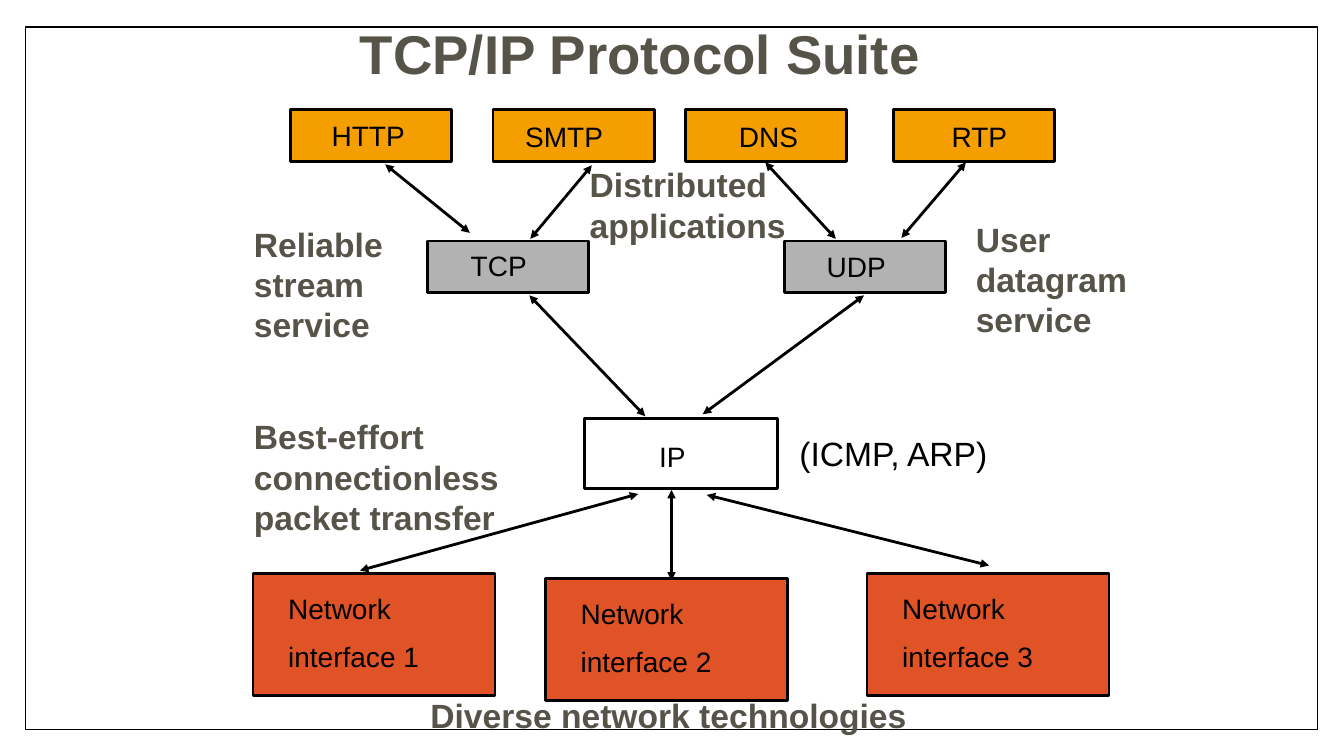
import pptx
import pptx.util
import pptx.dml.color
import pptx.enum.shapes
import pptx.enum.text
import pptx.oxml
import pptx.oxml.ns

Inches = pptx.util.Inches
Pt = pptx.util.Pt
RGBColor = pptx.dml.color.RGBColor
ANCHOR = pptx.enum.text.MSO_ANCHOR

BLACK = RGBColor(0x00, 0x00, 0x00)
WHITE = RGBColor(0xFF, 0xFF, 0xFF)
TAUPE = RGBColor(0x56, 0x53, 0x49)
ORANGE = RGBColor(0xF5, 0x9E, 0x00)
GRAY = RGBColor(0xB2, 0xB2, 0xB2)
RED = RGBColor(0xDF, 0x53, 0x27)

FRAME = (0.25, 0.27, 12.82, 6.97)
TITLE = ("TCP/IP Protocol Suite", (3.47, 0.15, 5.78, 0.75))
SIDE_PROTOCOLS = ("(ICMP, ARP)", (7.83, 4.24, 2.13, 0.5))
CAPTIONS = [
    ("Diverse network technologies", (4.17, 6.84, 5.17, 0.5)),
    ("Reliable stream service", (2.42, 2.17, 2, 1.31)),
    ("User\ndatagram service", (9.58, 2.12, 2, 1.31)),
    ("Distributed applications", (5.75, 1.58, 2.58, 0.91)),
    ("Best-effort\nconnectionless packet transfer", (2.42, 4.08, 3.18, 1.31)),
]

LAYERS = [
    dict(size=(1.6, 0.51), fill=ORANGE, label_fill=ORANGE, label_height=0.43, nodes=[
        ("HTTP", 2.88, 1.09, 0.31, 0.04, 1.03),
        ("SMTP", 4.89, 1.09, 0.22, 0.05, 0.97),
        ("DNS", 6.8, 1.09, 0.43, 0.05, 0.87),
        ("RTP", 8.86, 1.09, 0.48, 0.05, 0.76),
    ]),
    dict(size=(1.6, 0.51), fill=GRAY, label_fill=None, label_height=0.43, nodes=[
        ("TCP", 4.24, 2.39, 0.33, 0.03, 0.76),
        ("UDP", 7.78, 2.39, 0.32, 0.04, 0.79),
    ]),
    dict(size=(1.91, 0.7), fill=None, label_fill=None, label_height=0.43, nodes=[
        ("IP", 5.8, 4.15, 0.64, 0.16, 0.46),
    ]),
    dict(size=(2.4, 1.21), fill=RED, label_fill=RED, label_height=0.93, nodes=[
        ("Network\ninterface 1", 2.51, 5.69, 0.25, 0.12, 1.94),
        ("Network\ninterface 2", 5.41, 5.74, 0.25, 0.12, 1.94),
        ("Network\ninterface 3", 8.6, 5.69, 0.25, 0.12, 1.94),
    ]),
]

ARROWS = [
    (3.82, 1.63, 4.66, 2.31),
    (5.26, 2.37, 5.87, 1.64),
    (8.29, 2.37, 7.59, 1.61),
    (8.94, 2.36, 9.58, 1.61),
    (6.4, 4.13, 5.25, 2.93),
    (6.97, 4.11, 8.57, 2.93),
    (3.57, 5.66, 6.33, 4.9),
    (6.66, 5.76, 6.66, 4.86),
    (9.81, 5.61, 7.01, 4.91),
]

CAPTION_FONT = dict(name="Arial", size=Pt(24), bold=True)
TITLE_FONT = dict(name="Arial", size=Pt(39), bold=True)
SIDE_FONT = dict(name="Arial", size=Pt(24), bold=False)
LABEL_FONT = dict(name="Arial", size=Pt(20), bold=False)


def paint(shape, color):
    if color is None:
        shape.fill.background()
    else:
        shape.fill.solid()
        shape.fill.fore_color.rgb = color


def add_box(slide, bounds, fill, line_width):
    box = slide.shapes.add_shape(
        pptx.enum.shapes.MSO_SHAPE.RECTANGLE, *map(Inches, bounds))
    box.shadow.inherit = False
    paint(box, fill)
    box.line.color.rgb = BLACK
    box.line.width = Pt(line_width)


def add_words(slide, words, bounds, font, color, wrap=True,
              anchor=ANCHOR.TOP, gap=0, fill=None):
    holder = slide.shapes.add_textbox(*map(Inches, bounds))
    paint(holder, fill)
    frame = holder.text_frame
    frame.word_wrap = wrap
    frame.vertical_anchor = anchor
    for index, line in enumerate(words.split("\n")):
        paragraph = frame.add_paragraph() if index else frame.paragraphs[0]
        if index:
            paragraph.space_before = Pt(gap)
        run = paragraph.add_run()
        run.text = line
        for attribute, value in font.items():
            setattr(run.font, attribute, value)
        run.font.color.rgb = color


def add_arrow(slide, ends):
    arrow = slide.shapes.add_connector(
        pptx.enum.shapes.MSO_CONNECTOR.STRAIGHT, *map(Inches, ends))
    arrow.line.color.rgb = BLACK
    arrow.line.width = Pt(2)
    line = arrow.line._get_or_add_ln()
    for tag in ("a:headEnd", "a:tailEnd"):
        tip = pptx.oxml.parse_xml(
            f'<{tag} {pptx.oxml.ns.nsdecls("a")} type="triangle"/>')
        line.append(tip)
    arrow._element.spPr.append(pptx.oxml.parse_xml(
        f'<a:effectLst {pptx.oxml.ns.nsdecls("a")}/>'))


def main():
    deck = pptx.Presentation()
    deck.slide_width, deck.slide_height = Inches(13.33), Inches(7.5)
    slide = deck.slides.add_slide(deck.slide_layouts[6])

    add_box(slide, FRAME, WHITE, 1)
    add_words(slide, *TITLE, TITLE_FONT, TAUPE, wrap=False)
    add_words(slide, *SIDE_PROTOCOLS, SIDE_FONT, BLACK, wrap=False,
              anchor=ANCHOR.MIDDLE)
    for ends in ARROWS:
        add_arrow(slide, ends)
    for words, bounds in CAPTIONS:
        add_words(slide, words, bounds, CAPTION_FONT, TAUPE)

    for layer in LAYERS:
        for words, left, top, shift, drop, label_width in layer["nodes"]:
            add_box(slide, (left, top, *layer["size"]), layer["fill"], 2)
            label = (left + shift, top + drop, label_width, layer["label_height"])
            add_words(slide, words, label, LABEL_FONT, BLACK,
                      wrap=label_width > 1, anchor=ANCHOR.MIDDLE, gap=10,
                      fill=layer["label_fill"])

    deck.save("out.pptx")


if __name__ == "__main__":
    main()
